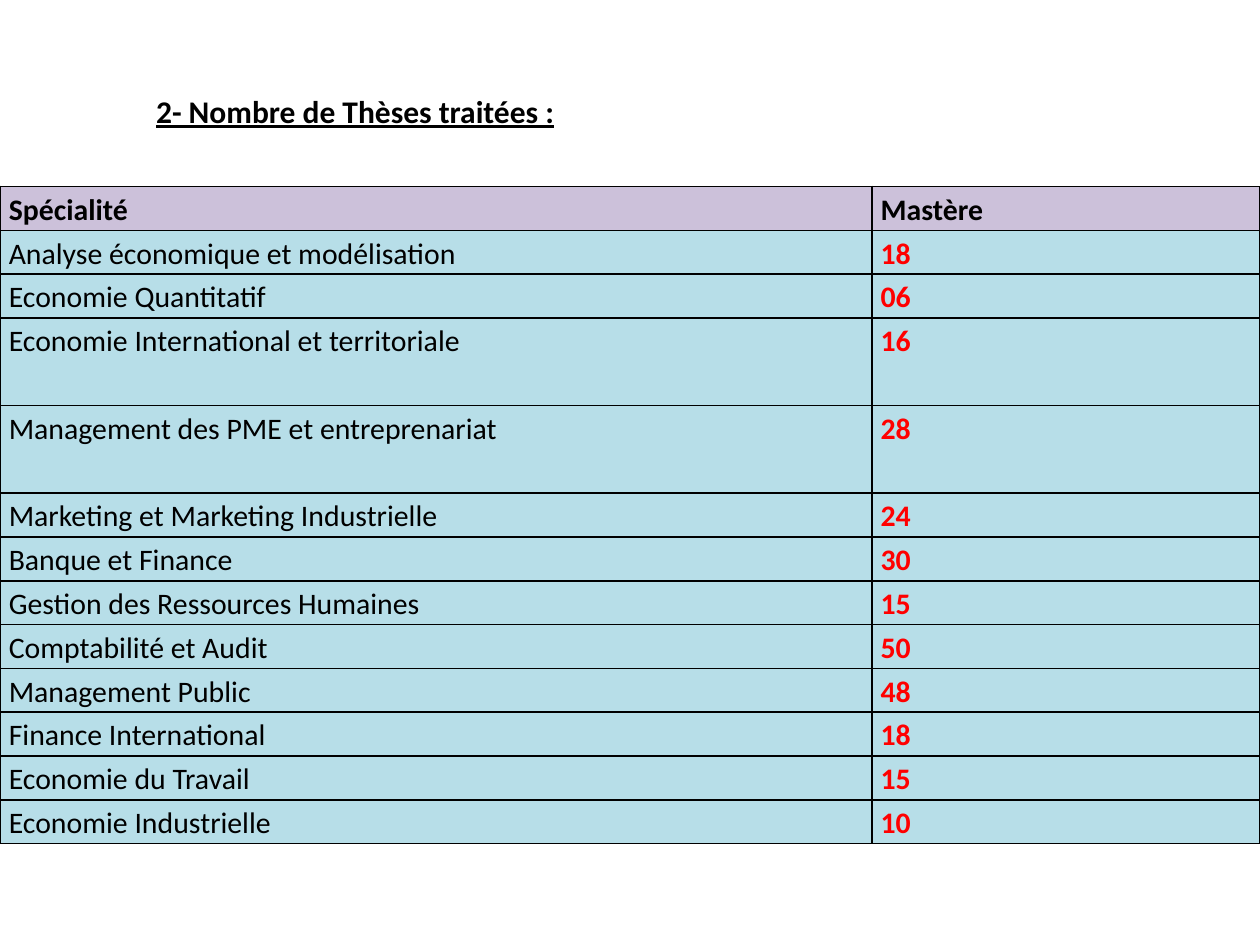
from dataclasses import dataclass
from lxml.etree import SubElement
from pptx import Presentation
from pptx.dml.color import RGBColor
from pptx.enum.text import MSO_ANCHOR
from pptx.oxml.ns import qn
from pptx.util import Inches, Pt


@dataclass(frozen=True)
class Theme:
    """Colours, font and type sizes of the slide."""
    font: str = "Calibri"
    ink: str = "000000"
    count: str = "FF0000"
    head: str = "CCC1DA"
    body: str = "B7DEE8"
    title: int = 18
    cell: int = 17
    rule: int = 1


THEME = Theme()
TITLE = "2- Nombre de Thèses traitées :"
HEADS = ("Spécialité", "Mastère")
ROWS = (
    ("Analyse économique et modélisation", "18"),
    ("Economie Quantitatif", "06"),
    ("Economie International et territoriale", "16"),
    ("Management des PME et entreprenariat", "28"),
    ("Marketing et Marketing Industrielle", "24"),
    ("Banque et Finance", "30"),
    ("Gestion des Ressources Humaines", "15"),
    ("Comptabilité et Audit", "50"),
    ("Management Public", "48"),
    ("Finance International", "18"),
    ("Economie du Travail", "15"),
    ("Economie Industrielle", "10"),
)
TALL = (3, 4)
SPLIT = 6.92


def write(frame, text, size=THEME.cell, color=THEME.ink, bold=False, line=False, space=None):
    """Put formatted text in the first paragraph of a frame."""
    para = frame.paragraphs[0]
    para.line_spacing = space
    run = para.add_run()
    run.text = text
    font = run.font
    font.name, font.size = THEME.font, Pt(size)
    font.bold, font.underline = bold, line
    font.color.rgb = RGBColor.from_string(color)


def border(cell):
    """Draw a thin rule on all four sides of a cell."""
    props = cell._tc.get_or_add_tcPr()
    for spot, side in enumerate(("a:lnL", "a:lnR", "a:lnT", "a:lnB")):
        edge = SubElement(props, qn(side), w=str(Pt(THEME.rule)))
        fill = SubElement(edge, qn("a:solidFill"))
        SubElement(fill, qn("a:srgbClr"), val=THEME.ink)
        props.insert(spot, edge)


def fill_cell(cell, text, back, **style):
    """Set the text, fill, margins and rules of one cell."""
    cell.margin_left = cell.margin_right = Inches(0.07)
    cell.margin_top = cell.margin_bottom = 0
    cell.fill.solid()
    cell.fill.fore_color.rgb = RGBColor.from_string(back)
    write(cell.text_frame, text, space=1.15, **style)
    border(cell)


def add_title(slide, left, top, width, height):
    """Place the underlined heading."""
    box = slide.shapes.add_textbox(Inches(left), Inches(top), Inches(width), Inches(height))
    frame = box.text_frame
    frame.word_wrap = True
    frame.vertical_anchor = MSO_ANCHOR.TOP
    write(frame, TITLE, size=THEME.title, bold=True, line=True)


def add_grid(slide, left, top, width, height):
    """Place the table of theses, with two rows of double height."""
    count = len(ROWS) + 1
    shape = slide.shapes.add_table(
        count, len(HEADS), Inches(left), Inches(top), Inches(width), Inches(height))
    table = shape.table
    for col, size in zip(table.columns, (SPLIT, width - SPLIT)):
        col.width = Inches(size)
    unit = height / (count + len(TALL))
    for spot, row in enumerate(table.rows):
        row.height = Inches(unit * (2 if spot in TALL else 1))
    for col, text in enumerate(HEADS):
        fill_cell(table.cell(0, col), text, THEME.head, bold=True)
    for spot, (name, total) in enumerate(ROWS, 1):
        fill_cell(table.cell(spot, 0), name, THEME.body)
        fill_cell(table.cell(spot, 1), total, THEME.body, color=THEME.count, bold=True)


def main():
    """Build and save the slide."""
    deck = Presentation()
    deck.slide_width, deck.slide_height = Inches(10), Inches(7.5)
    slide = deck.slides.add_slide(deck.slide_layouts[6])
    add_grid(slide, 0, 1.48, 10, 5.22)
    add_title(slide, 1.14, 0.68, 10.08, 0.71)
    deck.save("out.pptx")


if __name__ == "__main__":
    main()
